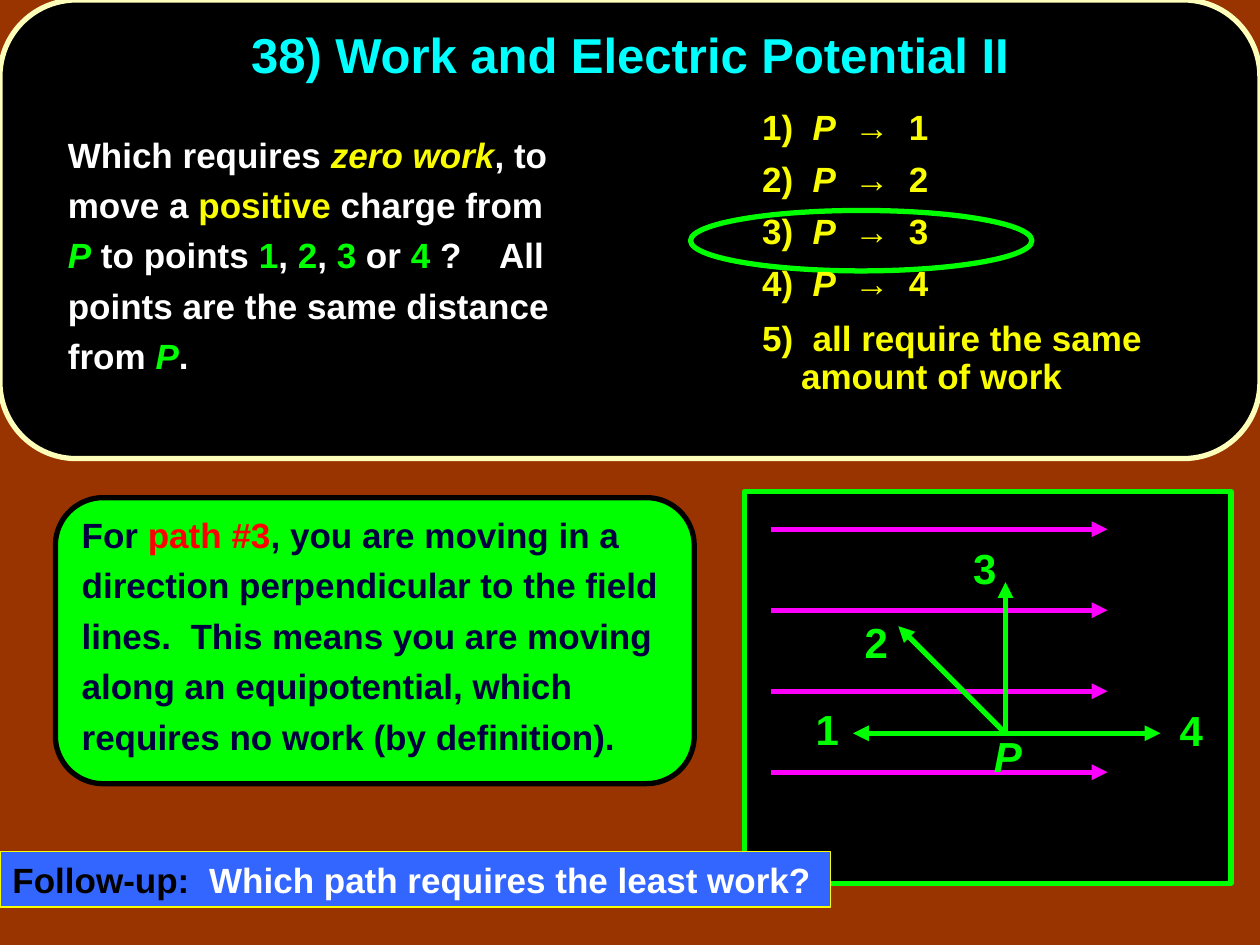
from dataclasses import dataclass

from lxml import etree
from pptx import Presentation
from pptx import util as u
from pptx.dml.color import RGBColor
from pptx.enum import shapes as s, text as t
from pptx.oxml.ns import qn

# The slide is a grid of 100 columns by 75 rows of square cells.
COLS, ROWS = 100, 75
CELL = u.Inches(0.1)
HUES = {
    "rust": "993300", "black": "000000", "white": "FFFFFF", "cream": "FCFEB9",
    "lime": "00FF00", "pink": "FF00FF", "yellow": "FAFD00", "navy": "000040",
    "red": "FF0000", "cyan": "00FFFF", "blue": "3366FF",
}


@dataclass
class Box:
    col: float
    row: float
    wide: float
    high: float


@dataclass
class Run:
    text: str
    hue: str = ""
    slant: bool = False


@dataclass
class Style:
    hue: str
    size: int = 20
    lines: float = 1.0
    before: float = 0
    left: float = 0
    hang: float = 0
    align: t.PP_ALIGN = t.PP_ALIGN.LEFT


@dataclass
class Arrow:
    start: tuple[float, float]
    end: tuple[float, float]
    hue: str


def cells(*sizes: float) -> list[int]:
    return [round(size * CELL) for size in sizes]


def place(box: Box) -> list[int]:
    return cells(box.col, box.row, box.wide, box.high)


def color(hue: str) -> RGBColor:
    return RGBColor.from_string(HUES[hue])


def panel(parent, kind, box: Box, fill: str, edge: str, width: float = 3):
    shape = parent.add_shape(kind, *place(box))
    shape.shadow.inherit = False
    if fill:
        shape.fill.solid()
        shape.fill.fore_color.rgb = color(fill)
    else:
        shape.fill.background()
    shape.line.color.rgb = color(edge)
    shape.line.width = u.Pt(width)
    return shape


def write(para, runs: list[Run], style: Style) -> None:
    para.alignment = style.align
    para.line_spacing = style.lines
    para.space_before = u.Pt(style.before)
    props = para._p.get_or_add_pPr()
    left, hang = cells(style.left, style.hang)
    props.set("marL", str(left))
    props.set("indent", str(-hang))
    font = para.font
    font.name, font.size, font.bold = "Arial", u.Pt(style.size), True
    font.color.rgb = color(style.hue)
    for part in runs:
        run = para.add_run()
        run.text = part.text
        if part.hue:
            run.font.color.rgb = color(part.hue)
        if part.slant:
            run.font.italic = True


def textbox(parent, box: Box, paras: list[tuple[list[Run], Style]],
            anchor=t.MSO_ANCHOR.TOP, wrap: bool = True) -> None:
    frame = parent.add_textbox(*place(box)).text_frame
    frame.word_wrap = wrap
    frame.vertical_anchor = anchor
    for i, (runs, style) in enumerate(paras):
        para = frame.add_paragraph() if i else frame.paragraphs[0]
        write(para, runs, style)


def draw(parent, arrow: Arrow) -> None:
    line = parent.add_connector(s.MSO_CONNECTOR.STRAIGHT,
                                *cells(*arrow.start, *arrow.end))
    line.line.color.rgb = color(arrow.hue)
    line.line.width = u.Pt(3)
    etree.SubElement(line.line._get_or_add_ln(), qn("a:tailEnd"), type="triangle")
    etree.SubElement(line._element.spPr, qn("a:effectLst"))


def answer(tree) -> None:
    panel(tree, s.MSO_SHAPE.ROUNDED_RECTANGLE, Box(4.4, 39.5, 50.7, 22.7),
          "lime", "black")
    runs = [
        Run("For "), Run("path #3", "red"),
        Run(", you are moving in a direction perpendicular to the field lines.  "
            "This means you are moving along an equipotential, which requires "
            "no work (by definition)."),
    ]
    style = Style("navy", lines=1.2, before=10.5, left=3.1)
    textbox(tree, Box(2.4, 39.6, 52.6, 21), [(runs, style)])


def question(tree) -> None:
    panel(tree, s.MSO_SHAPE.ROUNDED_RECTANGLE, Box(0, 0, COLS, 36.4),
          "black", "cream")
    panel(tree, s.MSO_SHAPE.OVAL, Box(54.8, 16.7, 27.1, 4.8), "", "lime")
    point = Run("P", "lime", True)
    runs = [
        Run("Which requires "), Run("zero work", "yellow", True), Run(", to move a "),
        Run("positive", "yellow"), Run(" charge from "), point, Run(" to points "),
        Run("1", "lime"), Run(", "), Run("2", "lime"), Run(", "), Run("3", "lime"),
        Run(" or "), Run("4", "lime"),
        Run(" ?    All points are the same distance from "), point, Run("."),
    ]
    style = Style("white", lines=1.2, before=10.5, left=4.4)
    textbox(tree, Box(0, 9.4, 46.5, 24.7), [(runs, style)])


def choices(tree) -> None:
    def style(lines: float) -> Style:
        return Style("yellow", lines=lines, before=10.5, left=3.1, hang=3.1)

    paras = [([Run(f"{n})  "), Run("P  ", slant=True), Run(f"→  {n}")], style(0.8))
             for n in range(1, 5)]
    paras.append(([Run("5)  all require the same amount of work")], style(0.9)))
    textbox(tree, Box(59.5, 8.5, 40.5, 24.4), paras)


def field(tree) -> None:
    """Draw the field lines and the four paths that leave P."""
    group = tree.add_group_shape().shapes
    panel(group, s.MSO_SHAPE.RECTANGLE, Box(59.1, 39, 38.6, 31.1), "black", "lime")
    for i in range(4):
        row = 42 + 6.43 * i
        draw(group, Arrow((61.2, row), (87.9, row), "pink"))
    for end in [(67.7, 58.2), (71.3, 49.7), (79.8, 46.2), (92.1, 58.2)]:
        draw(group, Arrow((79.8, 58.2), end, "lime"))
    style = Style("lime", size=24, lines=0.9, align=t.PP_ALIGN.CENTER)
    for name, col, row in [("P", 77.9, 57.9), ("1", 63.7, 55.8), ("2", 67.6, 48.9),
                           ("3", 76.2, 43), ("4", 92.6, 55.9)]:
        textbox(group, Box(col, row, 3.9, 4.6), [([Run(name, slant=name == "P")], style)],
                t.MSO_ANCHOR.MIDDLE, False)


def title(tree) -> None:
    style = Style("cyan", size=28, lines=0.9, align=t.PP_ALIGN.CENTER)
    textbox(tree, Box(0, 0, COLS, 9.2),
            [([Run("38) Work and Electric Potential II")], style)],
            t.MSO_ANCHOR.MIDDLE)


def follow(tree) -> None:
    bar = panel(tree, s.MSO_SHAPE.RECTANGLE, Box(0, 67.6, 65.9, 4.4),
                "blue", "yellow", 0.75)
    write(bar.text_frame.paragraphs[0],
          [Run("Follow-up:", "black"), Run("  Which path requires the least work?")],
          Style("white"))


def main() -> None:
    deck = Presentation()
    deck.slide_width, deck.slide_height = cells(COLS, ROWS)
    slide = deck.slides.add_slide(deck.slide_layouts[6])
    slide.background.fill.solid()
    slide.background.fill.fore_color.rgb = color("rust")
    for part in (answer, question, choices, field, title, follow):
        part(slide.shapes)
    deck.save("out.pptx")


if __name__ == "__main__":
    main()
